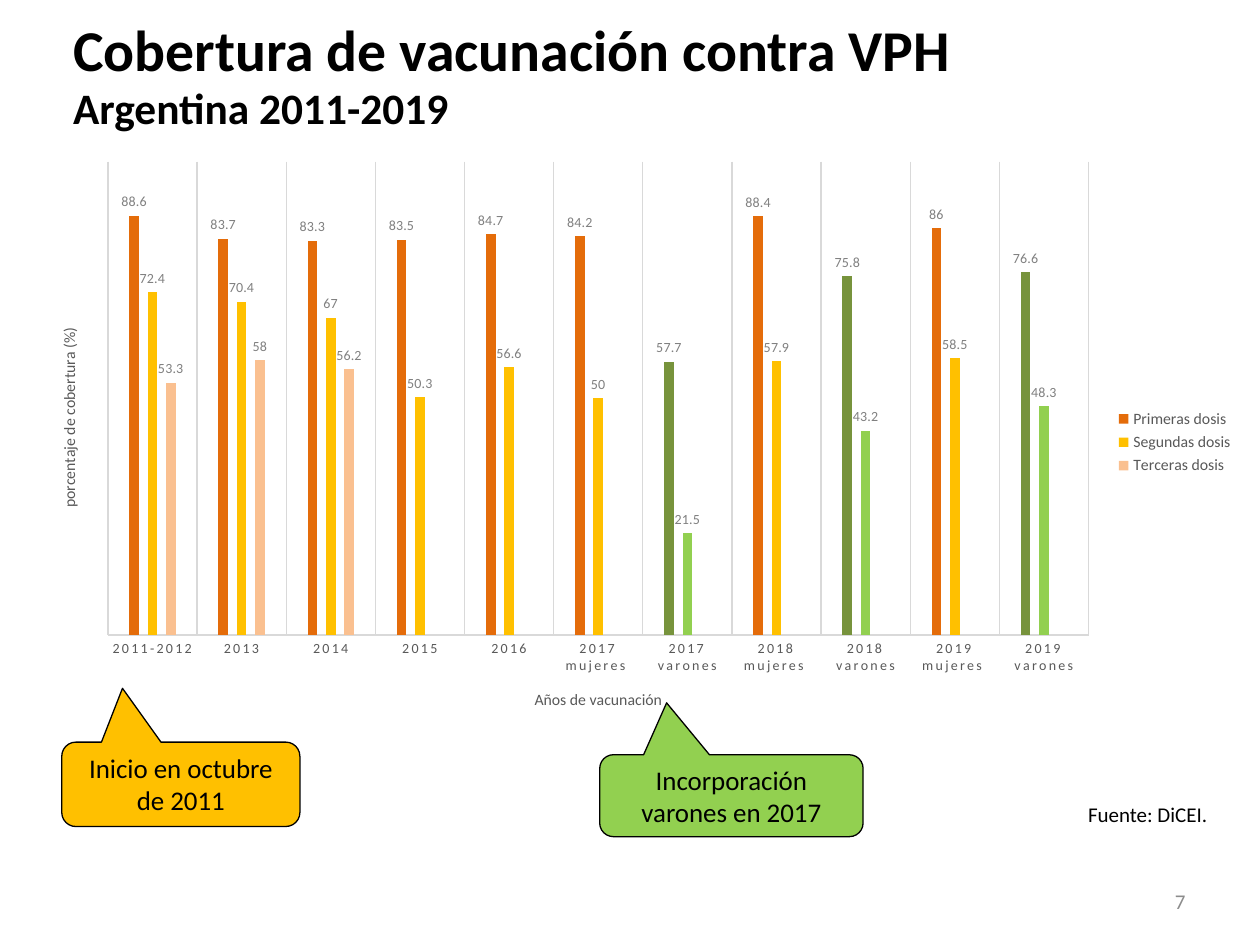
from dataclasses import dataclass

from lxml import etree
from pptx import Presentation
from pptx.chart.data import CategoryChartData
from pptx.dml.color import RGBColor
from pptx.enum.chart import XL_CHART_TYPE, XL_LABEL_POSITION, XL_LEGEND_POSITION, XL_TICK_MARK
from pptx.enum.shapes import MSO_SHAPE
from pptx.enum.text import MSO_ANCHOR, MSO_AUTO_SIZE, PP_ALIGN
from pptx.oxml import parse_xml
from pptx.oxml.ns import nsdecls, qn
from pptx.util import Inches, Pt

CALLOUT = MSO_SHAPE.ROUNDED_RECTANGULAR_CALLOUT
LEFT, CENTER, RIGHT = PP_ALIGN.LEFT, PP_ALIGN.CENTER, PP_ALIGN.RIGHT
TOP, MIDDLE = MSO_ANCHOR.TOP, MSO_ANCHOR.MIDDLE


@dataclass(frozen=True)
class Theme:
    font: str = "Calibri"
    text: str = "000000"
    axis: str = "595959"
    label: str = "808080"
    grid: str = "D9D9D9"
    page_number: str = "8C8C8C"
    first: str = "E46C0A"
    second: str = "FFC000"
    third: str = "FAC090"
    first_men: str = "77933C"
    second_men: str = "92D050"
    title_size: float = 33
    subtitle_size: float = 24.8
    callout_size: float = 15.4
    note_size: float = 12
    axis_title_size: float = 9
    label_size: float = 8


THEME = Theme()


def style_font(font, size, color, bold=False):
    font.name = THEME.font
    font.size = Pt(size)
    font.bold = bold
    font.color.rgb = RGBColor.from_string(color)


def write_text(box, area, text, size, align, anchor=TOP, bold=False, color=THEME.text):
    """Place a shape and fill it with one formatted paragraph."""
    box.left, box.top, box.width, box.height = (Inches(length) for length in area)
    frame = box.text_frame
    frame.word_wrap = True
    frame.auto_size = MSO_AUTO_SIZE.NONE
    frame.vertical_anchor = anchor
    frame.margin_left = frame.margin_right = Inches(0.09)
    frame.margin_top = frame.margin_bottom = Inches(0.04)
    para = frame.paragraphs[0]
    para.text = text
    para.alignment = align
    para.space_before = Pt(0)
    style_font(para.font, size, color, bold)
    return para


deck = Presentation()
deck.slide_width, deck.slide_height = Inches(10), Inches(7.5)
page = deck.slides.add_slide(deck.slide_layouts[0])

# Headings
title = write_text(page.shapes.title, (0.49, 0.13, 9.02, 0.59),
                   "Cobertura de vacunación contra VPH", THEME.title_size, LEFT, bold=True)
title.line_spacing = 0.9
write_text(page.placeholders[1], (0.49, 0.6, 9.02, 0.5),
           "Argentina 2011-2019", THEME.subtitle_size, LEFT, bold=True)

# Coverage chart
categories = ["2011-2012", "2013", "2014", "2015", "2016"]
categories += [f"{year} {group}" for year in (2017, 2018, 2019) for group in ("mujeres ", "varones")]
doses = [
    ("Primeras dosis", THEME.first, THEME.first_men,
     [88.6, 83.7, 83.3, 83.5, 84.7, 84.2, 57.7, 88.4, 75.8, 86, 76.6]),
    ("Segundas dosis", THEME.second, THEME.second_men,
     [72.4, 70.4, 67, 50.3, 56.6, 50, 21.5, 57.9, 43.2, 58.5, 48.3]),
    ("Terceras dosis", THEME.third, None, [53.3, 58, 56.2] + [None] * 8),
]
data = CategoryChartData()
data.categories = categories
for name, _, _, values in doses:
    data.add_series(name, values)
chart = page.shapes.add_chart(XL_CHART_TYPE.COLUMN_CLUSTERED, Inches(0.28), Inches(1.19),
                              Inches(9.61), Inches(4.64), data).chart
style_font(chart.font, 10, THEME.text)
chart.has_title = False
chart.has_legend = True
chart.legend.position = XL_LEGEND_POSITION.RIGHT
chart.legend.include_in_layout = False
style_font(chart.legend.font, THEME.axis_title_size, THEME.axis)

plot = chart.plots[0]
plot.gap_width = 444
plot.overlap = -90
plot.vary_by_categories = False
for series, (_, color, men_color, _) in zip(plot.series, doses):
    series.format.fill.solid()
    series.format.fill.fore_color.rgb = RGBColor.from_string(color)
    labels = series.data_labels
    labels.show_value = True
    labels.position = XL_LABEL_POSITION.OUTSIDE_END
    style_font(labels.font, THEME.label_size, THEME.label)
    if men_color:
        for index, category in enumerate(categories):
            if category.endswith("varones"):
                fill = series.points[index].format.fill
                fill.solid()
                fill.fore_color.rgb = RGBColor.from_string(men_color)

years, coverage = chart.category_axis, chart.value_axis
for axis, caption in ((years, "Años de vacunación"), (coverage, "porcentaje de cobertura (%)")):
    para = axis.axis_title.text_frame.paragraphs[0]
    para.text = caption
    style_font(para.font, THEME.axis_title_size, THEME.axis)
years.major_tick_mark = XL_TICK_MARK.NONE
years.has_major_gridlines = True
for line in (years.format.line, years.major_gridlines.format.line):
    line.color.rgb = RGBColor.from_string(THEME.grid)
    line.width = Pt(0.75)
style_font(years.tick_labels.font, THEME.label_size, THEME.axis)
coverage.has_major_gridlines = False
coverage.minimum_scale, coverage.maximum_scale, coverage.major_unit = 0, 100, 20
coverage.visible = False

# Letter spacing of the years and inner plot area as fractions of the chart
chart.element.xpath(".//c:catAx/c:txPr//a:defRPr")[0].set("spc", "120")
plot_area = chart.element.xpath(".//c:plotArea")[0]
for automatic in plot_area.findall(qn("c:layout")):
    plot_area.remove(automatic)
layout = parse_xml(f'<c:layout {nsdecls("c")}><c:manualLayout/></c:layout>')
for tag, value in (("layoutTarget", "inner"), ("xMode", "edge"), ("yMode", "edge"),
                   ("x", "0.06"), ("y", "0.02"), ("w", "0.81"), ("h", "0.81")):
    etree.SubElement(layout[0], qn(f"c:{tag}")).set("val", value)
plot_area.insert(0, layout)

# Callouts
callouts = [
    ("Incorporación varones en 2017", (4.76, 5.99, 2.09, 0.65), THEME.second_men,
     (-0.246, -1.134, 0.167), MIDDLE),
    ("Inicio en octubre de 2011", (0.49, 5.89, 1.89, 0.67), THEME.second,
     (-0.245, -1.138, 0.167), TOP),
]
for text, area, color, adjustments, anchor in callouts:
    callout = page.shapes.add_shape(CALLOUT, *(Inches(length) for length in area))
    for index, value in enumerate(adjustments):
        callout.adjustments[index] = value
    callout.shadow.inherit = False
    callout.fill.solid()
    callout.fill.fore_color.rgb = RGBColor.from_string(color)
    callout.line.color.rgb = RGBColor.from_string(THEME.text)
    callout.line.width = Pt(0.75)
    write_text(callout, area, text, THEME.callout_size, CENTER, anchor)

# Source and page number
source_area, number_area = (6.32, 6.31, 3.39, 0.3), (7.17, 6.95, 2.33, 0.4)
write_text(page.shapes.add_textbox(0, 0, 0, 0), source_area, "Fuente: DiCEI. ",
           THEME.note_size, RIGHT, MIDDLE)
write_text(page.shapes.add_textbox(0, 0, 0, 0), number_area, "7",
           THEME.note_size, RIGHT, MIDDLE, color=THEME.page_number)

deck.save("out.pptx")
